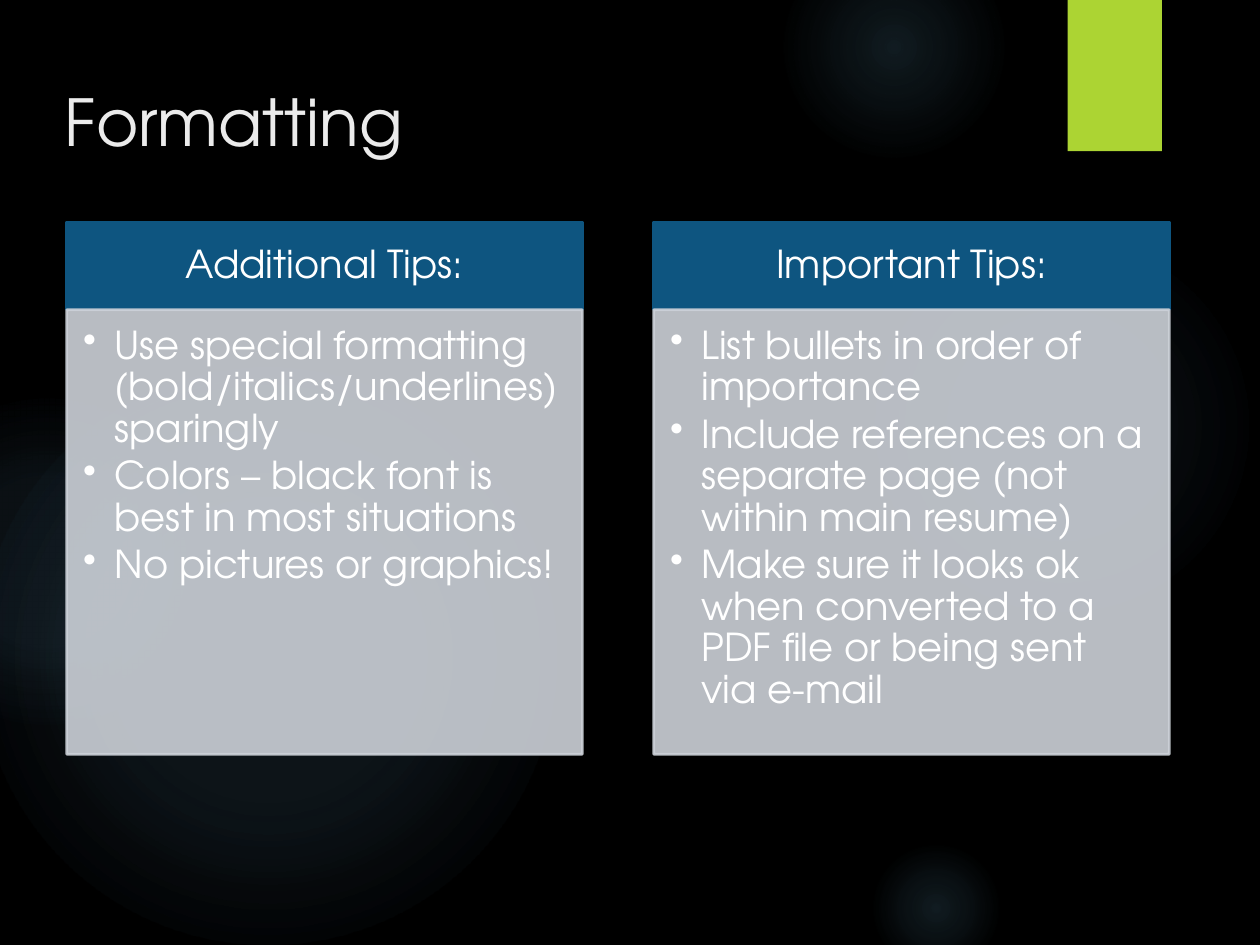
from dataclasses import dataclass

from lxml.etree import SubElement
from pptx import Presentation
from pptx.dml.color import RGBColor
from pptx.enum.shapes import MSO_SHAPE as Shape
from pptx.enum.text import MSO_ANCHOR as Anchor, PP_ALIGN as Align
from pptx.oxml import parse_xml
from pptx.oxml.ns import nsdecls, qn
from pptx.util import Inches, Pt


@dataclass(frozen=True)
class Theme:
    font: str = "TeX Gyre Adventor"
    background: str = "000000"
    glow: str = "7AC4F0"
    accent: str = "ACD433"
    header: str = "0E5580"
    panel: str = "CCD1D8"
    panel_alpha: int = 90
    title: str = "EBEBEB"
    text: str = "FFFFFF"
    title_size: int = 37
    text_size: int = 22


@dataclass(frozen=True)
class Box:
    """Place in grid units: 120 columns by 90 rows."""
    col: float
    row: float
    cols: float
    rows: float

    def emu(self) -> list[int]:
        return [Inches(n / 12) for n in (self.col, self.row, self.cols, self.rows)]


@dataclass(frozen=True)
class Glow:
    col: float
    row: float
    size: float
    stops: tuple  # (position %, opacity %)


@dataclass(frozen=True)
class Card:
    heading: str
    tips: tuple


THEME = Theme()
GLOWS = (
    Glow(82.67, 22, 37, ((0, 7), (36, 6), (69, 0))),
    Glow(74.67, -6, 21, ((0, 14), (36, 7), (73, 0))),
    Glow(82.67, 80, 13, ((0, 14), (36, 7), (66, 0))),
    Glow(-2, 35, 55, ((0, 11), (36, 10), (75, 0))),
    Glow(-11, 38, 31, ((0, 8), (36, 8), (72, 0))),
)
CARDS = (
    Card("Additional Tips:", (
        "Use special formatting (bold/italics/underlines) sparingly",
        "Colors – black font is best in most situations",
        "No pictures or graphics!",
    )),
    Card("Important Tips:", (
        "List bullets in order of importance",
        "Include references on a separate page (not within main resume)",
        "Make sure it looks ok when converted to a PDF file or being sent via e-mail",
    )),
)
CARD_LEFT, CARD_PITCH, CARD_COLS = 6.36, 55.9, 49.1
HEADER_ROW, HEADER_ROWS = 21.15, 8.3
BODY_ROW, BODY_ROWS = 29.5, 42.35


def rgb(color: str) -> RGBColor:
    return RGBColor.from_string(color)


def add_glow(s, glow: Glow) -> None:
    sp = s.shapes.add_shape(Shape.OVAL, *Box(glow.col, glow.row, glow.size, glow.size).emu())
    sp.shadow.inherit = False
    sp.line.fill.background()
    sp.fill.background()
    stops = "".join(
        f'<a:gs pos="{pos * 1000}"><a:srgbClr val="{THEME.glow}">'
        f'<a:alpha val="{alpha * 1000}"/></a:srgbClr></a:gs>'
        for pos, alpha in glow.stops)
    gradient = parse_xml(
        f'<a:gradFill {nsdecls("a")} rotWithShape="1"><a:gsLst>{stops}</a:gsLst>'
        '<a:path path="circle"><a:fillToRect l="50000" t="50000" r="50000" b="50000"/>'
        '</a:path></a:gradFill>')
    props = sp.element.spPr
    props.replace(props.find(qn("a:noFill")), gradient)


def add_rect(s, box: Box, color: str, outlined: bool = True, alpha: int = 100):
    sp = s.shapes.add_shape(Shape.RECTANGLE, *box.emu())
    sp.shadow.inherit = False
    sp.fill.solid()
    sp.fill.fore_color.rgb = rgb(color)
    if outlined:
        sp.line.color.rgb = rgb(color)
        sp.line.width = Pt(1.5)
    else:
        sp.line.fill.background()
    if alpha < 100:
        for clr in sp.element.spPr.iter(qn("a:srgbClr")):
            SubElement(clr, qn("a:alpha"), val=str(alpha * 1000))
    return sp


def add_accent(s) -> None:
    sp = add_rect(s, Box(101.67, 0, 9, 14.4), THEME.accent, outlined=False)
    sp.element.spPr.find(qn("a:effectLst")).append(parse_xml(
        f'<a:outerShdw {nsdecls("a")} blurRad="{Pt(3)}" dist="{Pt(2)}" dir="5400000" '
        'rotWithShape="0"><a:srgbClr val="000000"><a:alpha val="45000"/></a:srgbClr>'
        '</a:outerShdw>'))


def set_frame(tf, anchor, insets: tuple) -> None:
    tf.word_wrap = True
    tf.vertical_anchor = anchor
    tf.margin_left, tf.margin_top, tf.margin_right, tf.margin_bottom = map(Inches, insets)


def style(p, size: int, color: str, align=Align.LEFT) -> None:
    p.alignment = align
    for r in p.runs:
        r.font.name = THEME.font
        r.font.size = Pt(size)
        r.font.color.rgb = rgb(color)


def add_bullet(p) -> None:
    props = p._p.get_or_add_pPr()
    props.set("marL", str(Inches(0.25)))
    props.set("indent", str(Inches(-0.25)))
    SubElement(props, qn("a:buChar"), char="•")


def add_title(s, text: str) -> None:
    tf = s.shapes.add_textbox(*Box(5, 6, 92.5, 11).emu()).text_frame
    set_frame(tf, Anchor.MIDDLE, (0.1, 0.05, 0.1, 0.05))
    tf.text = text
    style(tf.paragraphs[0], THEME.title_size, THEME.title)


def add_card(s, index: int, card: Card) -> None:
    left = CARD_LEFT + index * CARD_PITCH
    # Heading bar
    header = add_rect(s, Box(left, HEADER_ROW, CARD_COLS, HEADER_ROWS), THEME.header)
    tf = header.text_frame
    set_frame(tf, Anchor.MIDDLE, (0.17, 0.1, 0.17, 0.1))
    tf.text = card.heading
    tf.paragraphs[0].line_spacing = 0.9
    style(tf.paragraphs[0], THEME.text_size, THEME.text, Align.CENTER)
    # Bulleted panel
    body = add_rect(s, Box(left, BODY_ROW, CARD_COLS, BODY_ROWS), THEME.panel,
                    alpha=THEME.panel_alpha)
    tf = body.text_frame
    set_frame(tf, Anchor.TOP, (0.13, 0.13, 0.17, 0.19))
    tf.text = "\n".join(card.tips)
    for p in tf.paragraphs:
        p.line_spacing = 0.9
        p.space_after = Pt(THEME.text_size * 0.15)
        style(p, THEME.text_size, THEME.text)
        add_bullet(p)


def main() -> None:
    prs = Presentation()
    prs.slide_width, prs.slide_height = Inches(10), Inches(7.5)
    s = prs.slides.add_slide(prs.slide_layouts[6])

    # Backdrop
    s.background.fill.solid()
    s.background.fill.fore_color.rgb = rgb(THEME.background)
    for glow in GLOWS:
        add_glow(s, glow)
    add_accent(s)

    # Content
    add_title(s, "Formatting")
    for index, card in enumerate(CARDS):
        add_card(s, index, card)

    prs.save("out.pptx")


if __name__ == "__main__":
    main()
